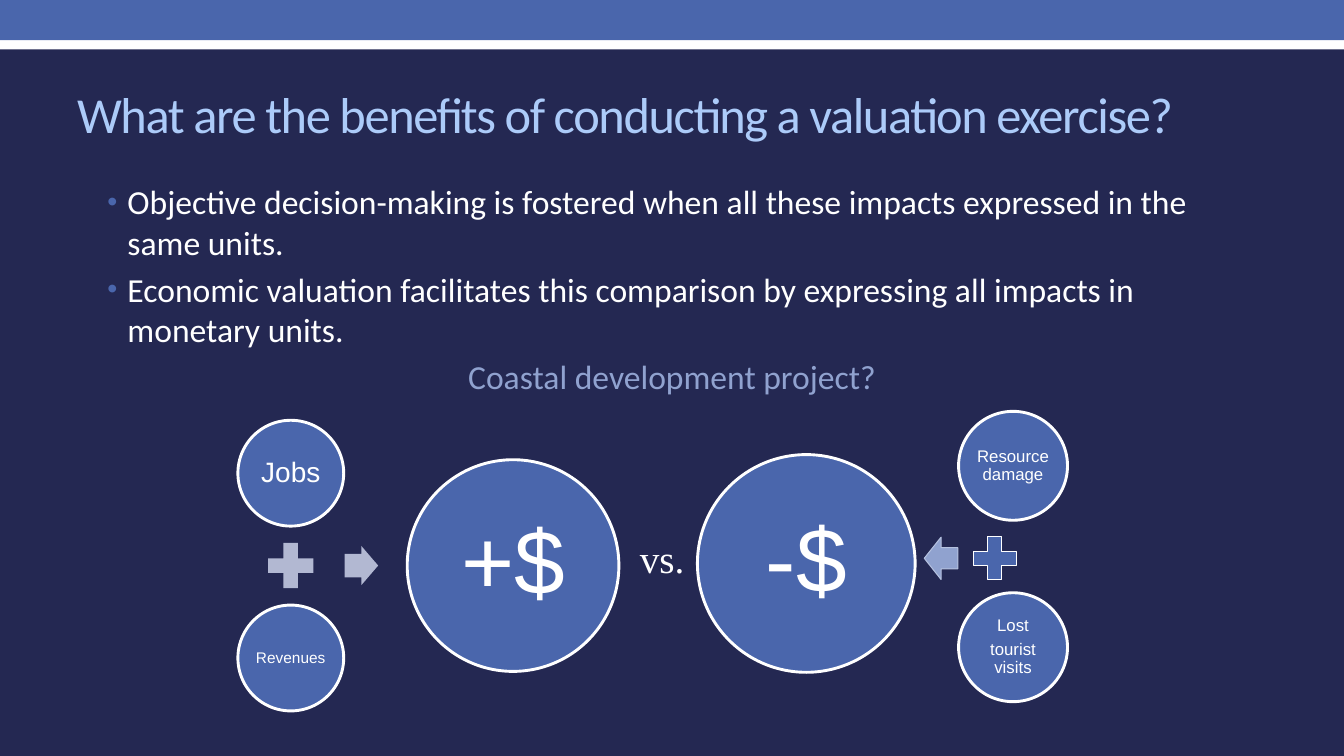
from lxml.etree import SubElement
from pptx import Presentation
from pptx.dml.color import RGBColor
from pptx.enum.shapes import MSO_SHAPE
from pptx.enum.text import MSO_ANCHOR, PP_ALIGN
from pptx.oxml.ns import qn
from pptx.util import Pt

NAVY, BLUE, WHITE = "242852", "4A66AC", "FFFFFF"
SKY, PERIWINKLE, MIST, PALE = "ACCBF9", "90A2CF", "B2B8D2", "B5C1DF"


def color(hex_value):
    return RGBColor.from_string(hex_value)


def write(shape, text, size=24, font="Calibri", fill=WHITE, align=PP_ALIGN.LEFT,
          anchor=MSO_ANCHOR.TOP, inset=None, line=None, before=0, after=0,
          tracking=None, first=True):
    frame = shape.text_frame
    frame.word_wrap = True
    frame.vertical_anchor = anchor
    if inset is not None:
        frame.margin_left = frame.margin_right = Pt(inset)
        frame.margin_top = frame.margin_bottom = Pt(inset)
    paragraph = frame.paragraphs[0] if first else frame.add_paragraph()
    paragraph.alignment = align
    paragraph.line_spacing = line
    paragraph.space_before = Pt(before)
    paragraph.space_after = Pt(after)
    run = paragraph.add_run()
    run.text = text
    run.font.size = Pt(size)
    run.font.name = font
    run.font.color.rgb = color(fill)
    if tracking is not None:
        run.font._element.set("spc", str(tracking))
    return paragraph


def add_text_box(slide, box):
    return slide.shapes.add_textbox(*(Pt(value) for value in box))


def add_figure(slide, kind, box, fill, outline=None, weight=0.75):
    shape = slide.shapes.add_shape(kind, *(Pt(value) for value in box))
    shape.shadow.inherit = False
    shape.fill.solid()
    shape.fill.fore_color.rgb = color(fill)
    if outline:
        shape.line.color.rgb = color(outline)
        shape.line.width = Pt(weight)
    else:
        shape.line.fill.background()
    return shape


def centered(x, y, width, height):
    return x - width / 2, y - height / 2, width, height


def add_bullet(paragraph):
    properties = paragraph._p.get_or_add_pPr()
    properties.set("marL", str(Pt(36)))
    properties.set("indent", str(-Pt(14.4)))
    bullet_color = SubElement(properties, qn("a:buClr"))
    SubElement(bullet_color, qn("a:srgbClr")).set("val", BLUE)
    SubElement(properties, qn("a:buSzPct")).set("val", "85000")
    SubElement(properties, qn("a:buFont")).set("typeface", "Arial")
    SubElement(properties, qn("a:buChar")).set("char", "•")


def add_banner(slide, width):
    add_figure(slide, MSO_SHAPE.RECTANGLE, (0, 17.3, width, 18), WHITE)
    add_figure(slide, MSO_SHAPE.RECTANGLE, (0, 0, width, 28.8), BLUE)


def add_title(slide, box):
    write(add_text_box(slide, box),
          "What are the benefits of conducting a valuation exercise?",
          size=36, fill=SKY, anchor=MSO_ANCHOR.MIDDLE, tracking=-100)


def add_body(slide, box):
    body = add_text_box(slide, box)
    points = [
        "Objective decision-making is fostered when all these impacts "
        "expressed in the same units.",
        "Economic valuation facilitates this comparison by expressing all "
        "impacts in monetary units.",
    ]
    for index, point in enumerate(points):
        add_bullet(write(body, point, before=4.8, first=index == 0))
    write(body, "Coastal development project?", fill=PERIWINKLE,
          align=PP_ALIGN.CENTER, before=4.8, first=False)


def add_circle(slide, box, lines, size, inset):
    circle = add_figure(slide, MSO_SHAPE.OVAL, box, BLUE, WHITE, 2.08)
    for index, text in enumerate(lines):
        write(circle, text, size=size, font="Arial", align=PP_ALIGN.CENTER,
              anchor=MSO_ANCHOR.MIDDLE, inset=inset, line=0.9,
              after=size * 0.35 if index < len(lines) - 1 else 0,
              first=index == 0)


def add_factors(slide, box, factors):
    left, top, diameter, height = box
    step = height - diameter
    for index, (lines, size) in enumerate(factors):
        add_circle(slide, (left, top + index * step, diameter, diameter),
                   lines, size, 1.5)


def add_gains(slide, box):
    left, top, width, height = box
    middle = top + height / 2
    diameter, total = 75.6, 151.2
    add_factors(slide, (left, top, diameter, height),
                [(["Jobs"], 20), (["Revenues"], 11)])
    add_figure(slide, MSO_SHAPE.MATH_PLUS,
               centered(left + diameter / 2, middle, 44, 44), MIST)
    arrow = add_figure(slide, MSO_SHAPE.RIGHT_ARROW,
                       centered(left + 88.2, middle, 24, 28), MIST)
    arrow.adjustments[0] = 0.6
    add_circle(slide, (left + width - total, middle - total / 2, total, total),
               ["+$"], 65, 6.5)


def add_losses(slide, box):
    left, top, width, height = box
    middle = top + height / 2
    diameter, total = 77.8, 155.5
    add_factors(slide, (left + width - diameter, top, diameter, height),
                [(["Resource damage"], 12), (["Lost", "tourist visits"], 12)])
    add_circle(slide, (left, middle + 5 - total / 2, total, total),
               ["-$"], 65, 6.5)
    add_figure(slide, MSO_SHAPE.LEFT_ARROW,
               centered(left + 174, middle + 1.3, 24, 30.2), PERIWINKLE, PALE)
    add_figure(slide, MSO_SHAPE.MATH_PLUS,
               centered(left + 212.4, middle + 1.3, 42, 42), BLUE, WHITE)


def add_versus(slide, box):
    write(add_text_box(slide, box), "vs.", size=28, font="Times New Roman")


def main():
    presentation = Presentation()
    presentation.slide_width = Pt(960)
    presentation.slide_height = Pt(540)
    slide = presentation.slides.add_slide(presentation.slide_layouts[6])
    slide.background.fill.solid()
    slide.background.fill.fore_color.rgb = color(NAVY)
    add_banner(slide, 960)
    add_title(slide, (48, 42, 864, 78))
    add_body(slide, (48, 126, 864, 384))
    add_gains(slide, (169.9, 300.2, 272.2, 207.6))
    add_losses(slide, (498.2, 293.8, 264.3, 207.4))
    add_versus(slide, (450, 378, 48, 41))
    presentation.save("out.pptx")


if __name__ == "__main__":
    main()
